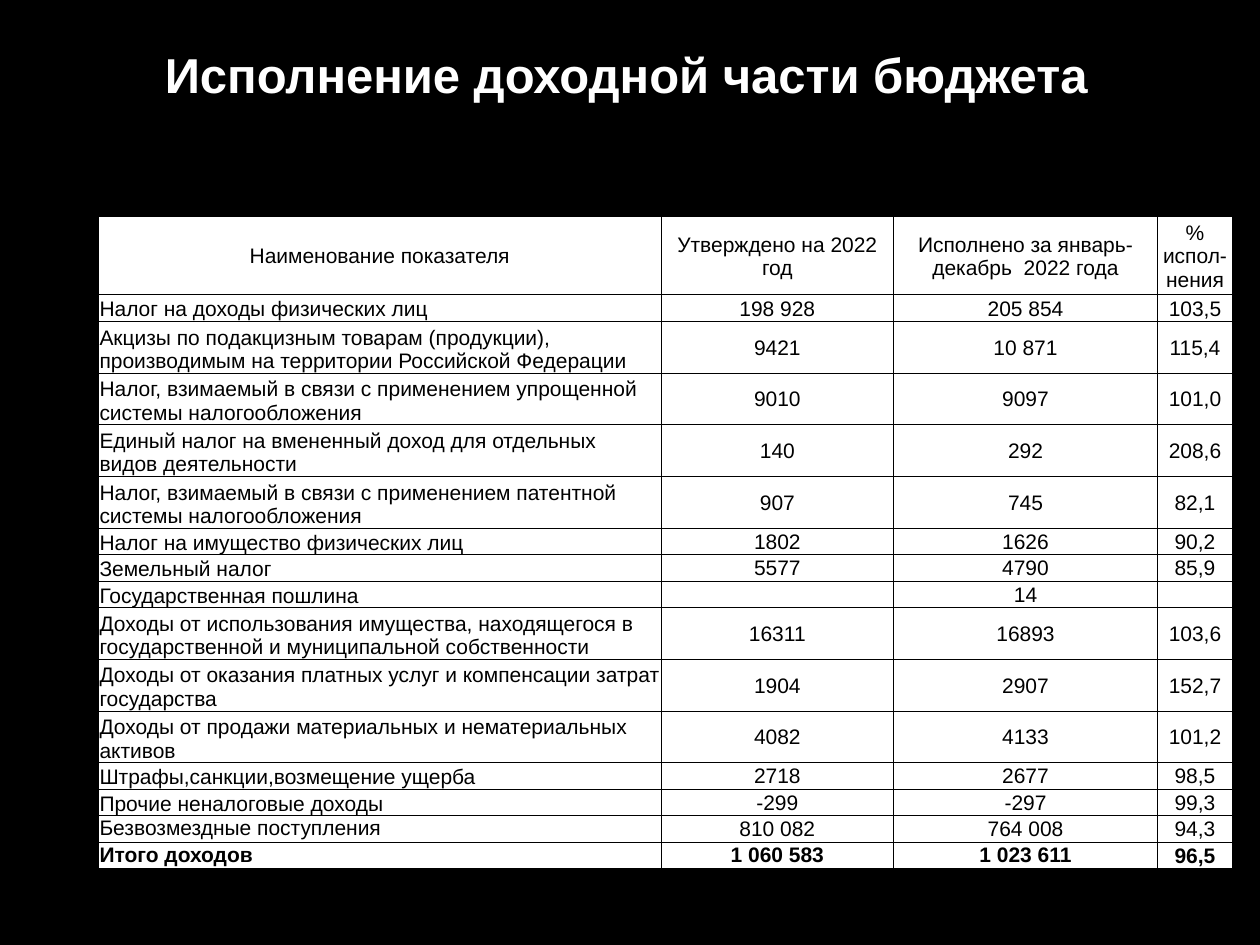
from lxml import etree
from pptx import Presentation
from pptx import util as u
from pptx.dml.color import RGBColor
from pptx.enum import text
from pptx.oxml.ns import qn

THEME = {
    "font": "Arial",
    "title_size": 28,
    "body_size": 12,
    "border_pt": 0.5,
    "white": "FFFFFF",
    "black": "000000",
}
HEADER = ["Наименование показателя", "Утверждено на 2022 год",
          "Исполнено за январь-декабрь  2022 года", "% испол-нения"]
INCOME = [
    ["Налог на доходы физических лиц", "198 928", "205 854", "103,5"],
    ["Акцизы по подакцизным товарам (продукции), производимым на территории Российской Федерации",
     "9421", "10 871", "115,4"],
    ["Налог, взимаемый в связи с применением упрощенной системы налогообложения",
     "9010", "9097", "101,0"],
    ["Единый налог на вмененный доход для отдельных видов деятельности",
     "140", "292", "208,6"],
    ["Налог, взимаемый в связи с применением патентной системы налогообложения",
     "907", "745", "82,1"],
    ["Налог на имущество физических лиц", "1802", "1626", "90,2"],
    ["Земельный налог", "5577", "4790", "85,9"],
    ["Государственная пошлина", "", "14", ""],
    ["Доходы от использования имущества, находящегося в государственной и муниципальной собственности",
     "16311", "16893", "103,6"],
    ["Доходы от оказания платных услуг и компенсации затрат государства",
     "1904", "2907", "152,7"],
    ["Доходы от продажи материальных и нематериальных активов",
     "4082", "4133", "101,2"],
    ["Штрафы,санкции,возмещение ущерба", "2718", "2677", "98,5"],
    ["Прочие неналоговые доходы", "-299", "-297", "99,3"],
    ["Безвозмездные поступления", "810 082", "764 008", "94,3"],
    ["Итого доходов", "1 060 583", "1 023 611", "96,5"],
]
ROWS = [HEADER] + INCOME
COL_WIDTHS = [4.47, 1.84, 2.1, 0.59]
ROW_HEIGHTS = [0.62] + [0.41 if len(row[0]) > 50 else 0.21 for row in INCOME]


def write(p, words, size, color, bold, align):
    p.alignment = align
    if not words:
        etree.SubElement(p._p, qn("a:endParaRPr"), sz=str(size * 100))
        return
    r = p.add_run()
    r.text = words
    for name, value in {"name": THEME["font"], "size": u.Pt(size), "bold": bold}.items():
        setattr(r.font, name, value)
    r.font.color.rgb = RGBColor.from_string(THEME[color])


def add_borders(cell):
    tcPr = cell._tc.get_or_add_tcPr()
    for i, side in enumerate(["lnL", "lnR", "lnT", "lnB"]):
        ln = etree.Element(qn(f"a:{side}"), w=str(u.Pt(THEME["border_pt"])))
        fill = etree.SubElement(ln, qn("a:solidFill"))
        etree.SubElement(fill, qn("a:srgbClr"), val=THEME["black"])
        tcPr.insert(i, ln)


prs = Presentation()
prs.slide_width, prs.slide_height = u.Inches(10), u.Inches(7.5)
s = prs.slides.add_slide(prs.slide_layouts[6])
s.background.fill.solid()
s.background.fill.fore_color.rgb = RGBColor.from_string(THEME["black"])

title = s.shapes.add_textbox(u.Inches(0.47), u.Inches(0.23), u.Inches(9), u.Inches(0.72))
tf = title.text_frame
tf.word_wrap = True
tf.vertical_anchor = text.MSO_ANCHOR.MIDDLE
write(tf.paragraphs[0], "Исполнение доходной части бюджета",
      THEME["title_size"], "white", True, text.PP_ALIGN.CENTER)

frame = s.shapes.add_table(len(ROWS), len(COL_WIDTHS), u.Inches(0.78), u.Inches(1.72),
                           u.Inches(sum(COL_WIDTHS)), u.Inches(sum(ROW_HEIGHTS)))
table = frame.table
table.first_row = table.horz_banding = False
for column, width in zip(table.columns, COL_WIDTHS):
    column.width = u.Inches(width)
for row, height in zip(table.rows, ROW_HEIGHTS):
    row.height = u.Inches(height)

last = len(ROWS) - 1
for i, row in enumerate(ROWS):
    for j, words in enumerate(row):
        is_name = i > 0 and j == 0
        anchor = text.MSO_ANCHOR.BOTTOM if is_name else text.MSO_ANCHOR.MIDDLE
        if (is_name and i >= last - 1) or (i == last and j < 3):
            anchor = text.MSO_ANCHOR.TOP
        cell = table.cell(i, j)
        layout = {
            "margin_left": u.Inches(0.01),
            "margin_right": u.Inches(0.01),
            "margin_top": u.Inches(0.01),
            "margin_bottom": 0,
            "vertical_anchor": anchor,
        }
        for name, value in layout.items():
            setattr(cell, name, value)
        cell.fill.solid()
        cell.fill.fore_color.rgb = RGBColor.from_string(THEME["white"])
        add_borders(cell)
        align = text.PP_ALIGN.LEFT if is_name else text.PP_ALIGN.CENTER
        write(cell.text_frame.paragraphs[0], words, THEME["body_size"], "black", i == last, align)

prs.save("out.pptx")
